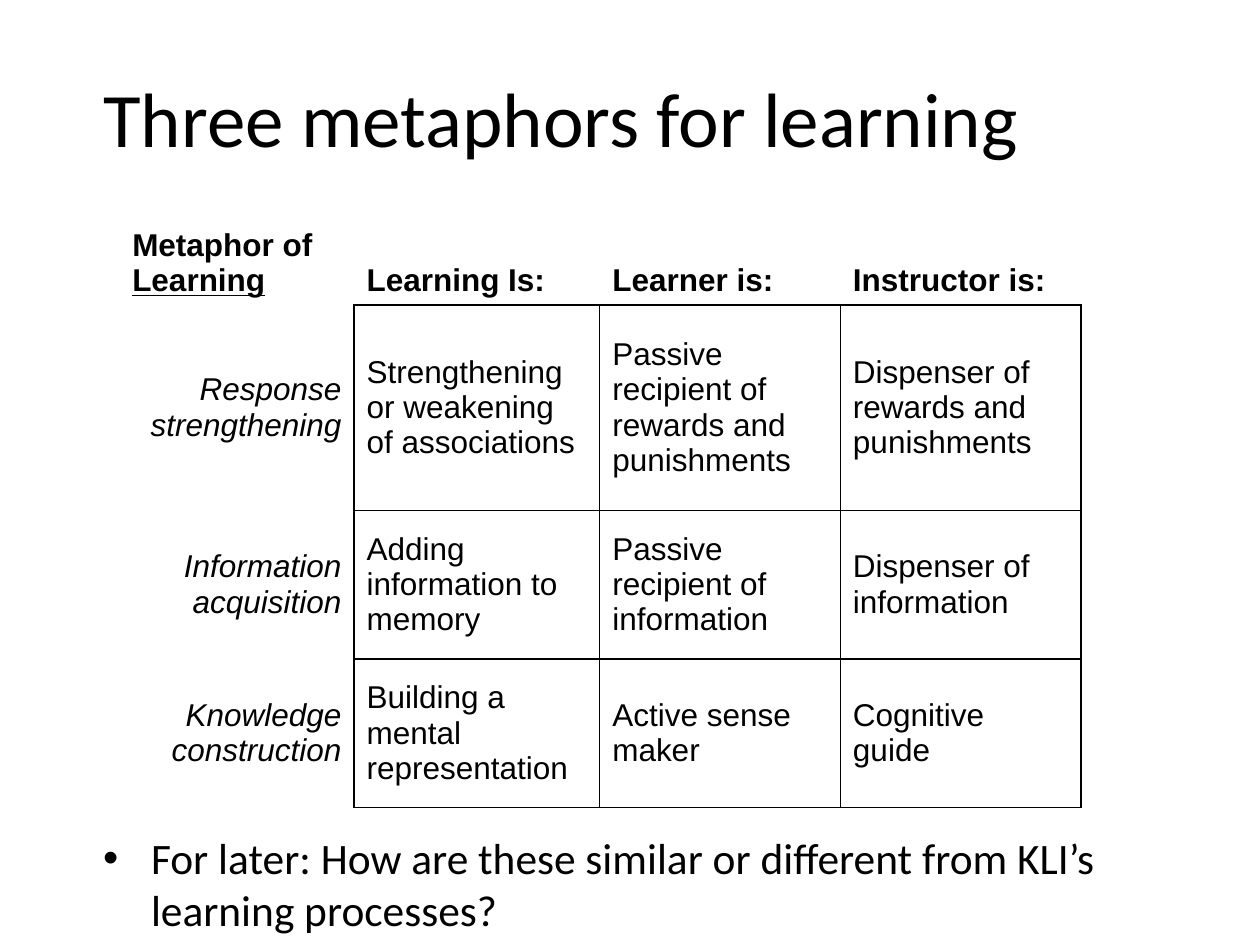
from lxml import etree
from pptx import Presentation
from pptx import util as u
from pptx.dml.color import RGBColor
from pptx.enum import text as t
from pptx.oxml.ns import qn

INK = "000000"
LEFT, WIDE = 0.72, 8.68
COLS = [1.86, 1.95, 1.91, 1.91]
ROWS = [1.06, 1.63, 1.18, 1.18]
HEADS = ["Metaphor of ", "Learning Is:", "Learner is:", "Instructor is:"]
BODY = [
    ["Response strengthening", "Strengthening or weakening of associations",
     "Passive recipient of rewards and punishments",
     "Dispenser of rewards and punishments"],
    ["Information acquisition", "Adding information to memory",
     "Passive recipient of information", "Dispenser of information"],
    ["Knowledge construction", "Building a mental representation",
     "Active sense maker", "Cognitive guide"],
]


def color(code):
    return RGBColor.from_string(code)


def style(para, size, name):
    font = para.font
    font.size, font.name = u.Pt(size), name
    font.color.rgb = color(INK)


def place(shape, left, top, wide, high):
    shape.left, shape.top = u.Inches(left), u.Inches(top)
    shape.width, shape.height = u.Inches(wide), u.Inches(high)


def border(cell, row, col):
    inner = row > 0 and col > 0
    shown = {
        "lnL": inner,
        "lnR": row > 0,
        "lnT": inner,
        "lnB": col > 0,
    }
    props = cell._tc.get_or_add_tcPr()
    for side, drawn in shown.items():
        line = etree.SubElement(props, qn("a:" + side), w=str(u.Pt(1)))
        if drawn:
            fill = etree.SubElement(line, qn("a:solidFill"))
            etree.SubElement(fill, qn("a:srgbClr"), val=INK)
        else:
            etree.SubElement(line, qn("a:noFill"))


def fill_cell(cell, words, row, col):
    border(cell, row, col)
    cell.fill.background()
    cell.vertical_anchor = t.MSO_ANCHOR.MIDDLE if row else t.MSO_ANCHOR.BOTTOM
    para = cell.text_frame.paragraphs[0]
    para.text = words
    para.space_before = u.Pt(3.6)
    style(para, 18, "Arial")
    para.font.bold = row == 0
    if row and col == 0:
        para.font.italic = True
        para.alignment = t.PP_ALIGN.RIGHT
    return para


def add_grid(slide):
    frame = slide.shapes.add_table(
        len(ROWS), len(COLS), u.Inches(0.95), u.Inches(1.36),
        u.Inches(sum(COLS)), u.Inches(sum(ROWS)))
    table = frame.table
    table.first_row = table.horz_banding = False
    for col, wide in zip(table.columns, COLS):
        col.width = u.Inches(wide)
    for row, high in zip(table.rows, ROWS):
        row.height = u.Inches(high)
    for r, line in enumerate([HEADS] + BODY):
        for c, words in enumerate(line):
            para = fill_cell(table.cell(r, c), words, r, c)
            if r == c == 0:
                run = para.add_run()
                run.text = "Learning"
                run.font.underline = True


def add_title(slide, words):
    title = slide.shapes.title
    place(title, LEFT, 0.3, WIDE, 1.25)
    title.text_frame.vertical_anchor = t.MSO_ANCHOR.MIDDLE
    para = title.text_frame.paragraphs[0]
    para.text = words
    para.alignment = t.PP_ALIGN.LEFT
    style(para, 44, "Calibri")


def add_bullet(slide, words):
    box = slide.shapes.add_textbox(0, 0, 0, 0)
    place(box, LEFT, 6.55, WIDE, 0.81)
    box.text_frame.word_wrap = True
    para = box.text_frame.paragraphs[0]
    para.text = words
    para.space_before = u.Pt(5)
    style(para, 24.8, "Calibri")
    props = para._p.get_or_add_pPr()
    dent = u.Inches(0.38)
    props.set("marL", str(dent))
    props.set("indent", str(-dent))
    mark = etree.Element(qn("a:buChar"), char="•")
    props.find(qn("a:defRPr")).addprevious(mark)
    face = etree.Element(qn("a:buFont"), typeface="Arial")
    mark.addprevious(face)


def main():
    deck = Presentation()
    deck.slide_width, deck.slide_height = u.Inches(10), u.Inches(7.5)
    slide = deck.slides.add_slide(deck.slide_layouts[5])
    add_grid(slide)
    add_title(slide, "Three metaphors for learning")
    add_bullet(slide, "For later: How are these similar or different "
                      "from KLI’s learning processes?")
    deck.save("out.pptx")


if __name__ == "__main__":
    main()
